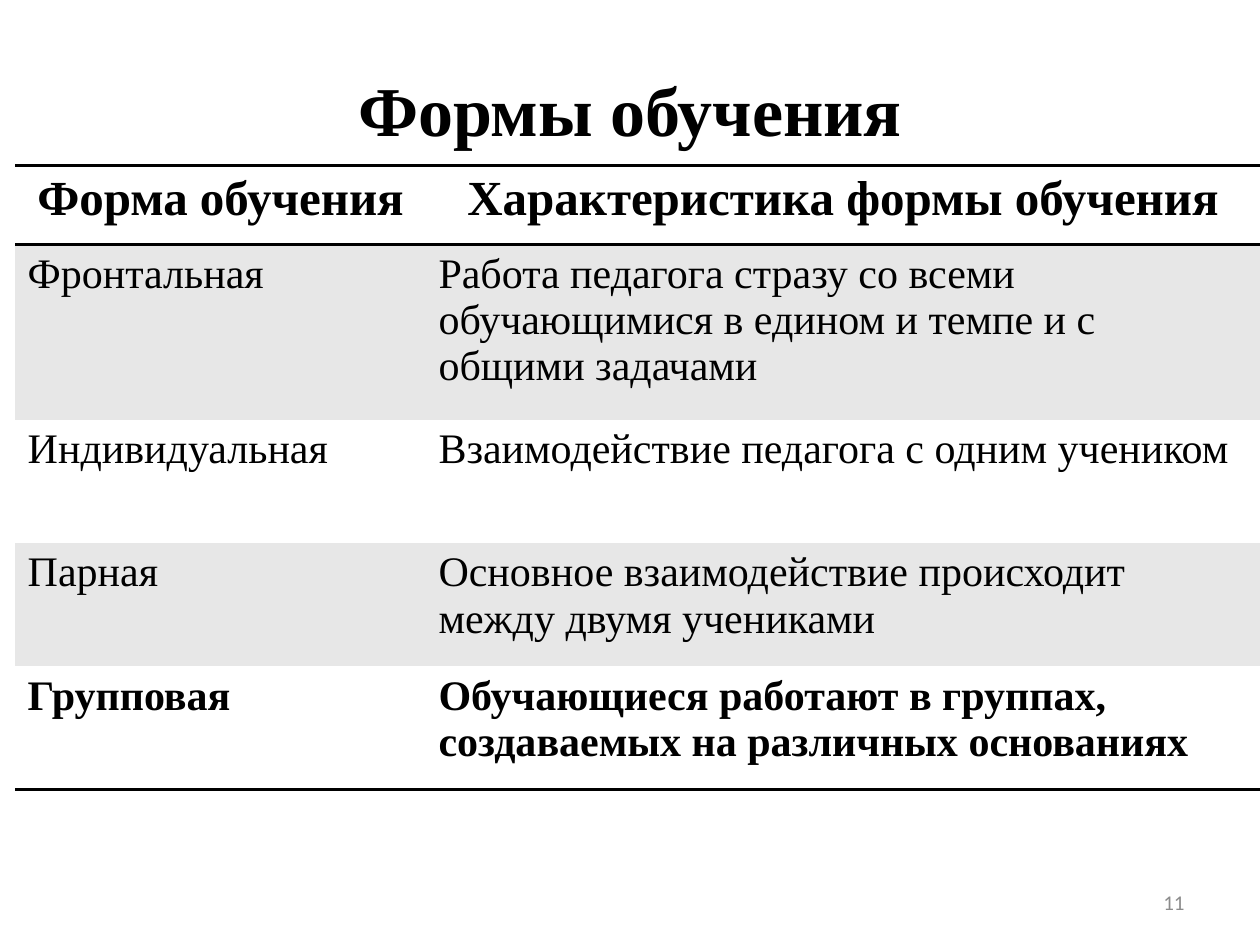
from dataclasses import dataclass

from lxml import etree
from pptx import Presentation
from pptx import util as u
from pptx.dml.color import RGBColor
from pptx.enum import text
from pptx.oxml import ns

WIDTH, HEIGHT = 10, 7.5
SERIF = "Times New Roman"
BLACK, WHITE, BAND = "000000", "FFFFFF", "E7E7E7"
COLUMN_SHARES = (0.33, 0.67)
TABLE_LEFT, TABLE_TOP, TABLE_WIDTH = 0.12, 1.31, 9.88
RULED_EDGES = (0, 1, 5)  # row boundaries that carry a black rule


@dataclass(frozen=True)
class Style:
    size: float
    font: str = SERIF
    color: str = BLACK
    bold: bool = False
    align: text.PP_ALIGN = text.PP_ALIGN.LEFT


@dataclass(frozen=True)
class Row:
    form: str
    description: str
    height: float
    style: Style
    fill: str = WHITE


TITLE = Style(40, bold=True, align=text.PP_ALIGN.CENTER)
HEADER = Style(28, bold=True, align=text.PP_ALIGN.CENTER)
BODY = Style(24)
STRONG = Style(24, bold=True)
NUMBER = Style(12, "Calibri", "8C8C8C", align=text.PP_ALIGN.RIGHT)

ROWS = (
    Row("Форма обучения", "Характеристика формы обучения", 0.63, HEADER),
    Row("Фронтальная",
        "Работа педагога стразу со всеми обучающимися в едином и темпе и с общими задачами",
        1.39, BODY, BAND),
    Row("Индивидуальная", "Взаимодействие педагога с одним учеником", 0.98, BODY),
    Row("Парная", "Основное взаимодействие происходит между двумя учениками",
        0.98, BODY, BAND),
    Row("Групповая", "Обучающиеся работают в группах, создаваемых на различных основаниях",
        0.98, STRONG),
)


def rgb(color: str) -> RGBColor:
    return RGBColor.from_string(color)


def write(frame, words: str, style: Style) -> None:
    paragraph = frame.paragraphs[0]
    paragraph.alignment = style.align
    run = paragraph.add_run()
    run.text = words
    run.font.name = style.font
    run.font.size = u.Pt(style.size)
    run.font.bold = style.bold
    run.font.color.rgb = rgb(style.color)


def add_label(slide, left: float, top: float, width: float, height: float,
              words: str, style: Style) -> None:
    """Add a vertically centred text box; lengths are shares of the slide."""
    shape = slide.shapes.add_textbox(
        u.Inches(left * WIDTH), u.Inches(top * HEIGHT),
        u.Inches(width * WIDTH), u.Inches(height * HEIGHT))
    shape.text_frame.word_wrap = True
    shape.text_frame.vertical_anchor = text.MSO_ANCHOR.MIDDLE
    write(shape.text_frame, words, style)


def set_borders(cell, row_index: int) -> None:
    """Rule the chosen row boundaries and hide every other cell edge."""
    ruled = {"lnT": row_index in RULED_EDGES, "lnB": row_index + 1 in RULED_EDGES}
    properties = cell._tc.get_or_add_tcPr()
    for edge in ("lnL", "lnR", "lnT", "lnB"):
        line = etree.SubElement(properties, ns.qn(f"a:{edge}"), w=str(u.Pt(2)))
        if ruled.get(edge):
            fill = etree.SubElement(line, ns.qn("a:solidFill"))
            etree.SubElement(fill, ns.qn("a:srgbClr"), val=BLACK)
        else:
            etree.SubElement(line, ns.qn("a:noFill"))


def add_forms_table(slide) -> None:
    table = slide.shapes.add_table(
        len(ROWS), len(COLUMN_SHARES), u.Inches(TABLE_LEFT), u.Inches(TABLE_TOP),
        u.Inches(TABLE_WIDTH), u.Inches(sum(row.height for row in ROWS))).table
    table.first_row = table.horz_banding = False
    for column, share in zip(table.columns, COLUMN_SHARES):
        column.width = u.Inches(TABLE_WIDTH * share)
    for index, row in enumerate(ROWS):
        table.rows[index].height = u.Inches(row.height)
        for cell, words in zip(table.rows[index].cells, (row.form, row.description)):
            set_borders(cell, index)
            cell.fill.solid()
            cell.fill.fore_color.rgb = rgb(row.fill)
            write(cell.text_frame, words, row.style)


def main() -> None:
    presentation = Presentation()
    presentation.slide_width = u.Inches(WIDTH)
    presentation.slide_height = u.Inches(HEIGHT)
    slide = presentation.slides.add_slide(presentation.slide_layouts[6])
    add_label(slide, 0.72, 0.93, 0.23, 0.05, "11", NUMBER)
    add_forms_table(slide)
    add_label(slide, 0.05, 0.03, 0.9, 0.17, "Формы обучения", TITLE)
    presentation.save("out.pptx")


if __name__ == "__main__":
    main()
